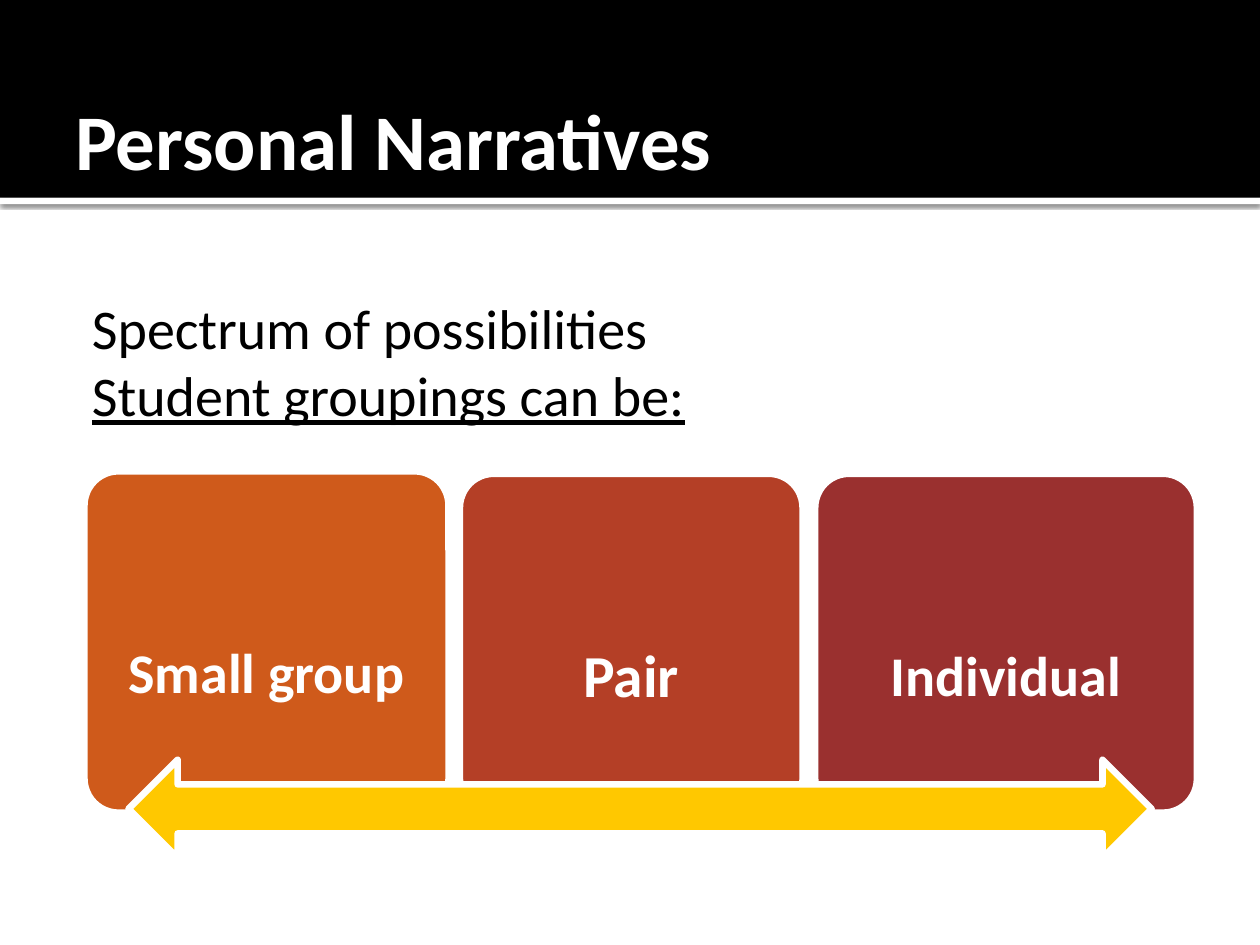
from lxml.etree import SubElement
from pptx import Presentation
from pptx.dml.color import RGBColor
from pptx.enum.shapes import MSO_SHAPE
from pptx.enum.text import MSO_ANCHOR, PP_ALIGN
from pptx.oxml.ns import qn
from pptx.util import Inches, Pt

WHITE = "FFFFFF"
BLACK = "000000"
GROUPINGS = [
    # label, left, top, width, height, fill, text size
    ("Small group", 0.67, 3.74, 2.89, 2.71, "CF5A1B", 32),
    ("Pair", 3.65, 3.76, 2.72, 2.69, "B43F26", 34),
    ("Individual", 6.47, 3.76, 3.03, 2.69, "9A302F", 32),
]


def color(hex_string):
    return RGBColor.from_string(hex_string)


def add_block(page, kind, left, top, width, height, fill, outlined=False):
    block = page.shapes.add_shape(
        kind, Inches(left), Inches(top), Inches(width), Inches(height))
    block.shadow.inherit = False
    block.fill.solid()
    block.fill.fore_color.rgb = color(fill)
    if outlined:
        block.line.color.rgb = color(WHITE)
        block.line.width = Pt(3.78)
    else:
        block.line.fill.background()
    return block


def add_drop_shadow(block):
    """Cast a soft shadow straight down."""
    effects = block._element.spPr.find(qn("a:effectLst"))
    shadow = SubElement(effects, qn("a:outerShdw"), blurRad=str(Pt(2.5)),
                        dist=str(Pt(0.8)), dir="5400000", rotWithShape="0")
    tint = SubElement(shadow, qn("a:srgbClr"), val=BLACK)
    SubElement(tint, qn("a:alpha"), val="60000")


def add_text(page, lines, left, top, width, height, size, text_color,
             bold=False, anchor=MSO_ANCHOR.TOP, align=PP_ALIGN.LEFT, inset=0.1):
    box = page.shapes.add_textbox(
        Inches(left), Inches(top), Inches(width), Inches(height))
    frame = box.text_frame
    frame.word_wrap = True
    frame.vertical_anchor = anchor
    frame.margin_left = frame.margin_right = Inches(inset)
    frame.margin_top = frame.margin_bottom = Inches(inset)
    frame.text = "\n".join(lines)
    for para in frame.paragraphs:
        para.alignment = align
        para.font.name = "Calibri"
        para.font.size = Pt(size)
        para.font.bold = bold
        para.font.color.rgb = color(text_color)
    return frame


def add_header(page):
    strip = add_block(page, MSO_SHAPE.RECTANGLE, 0, 1.57, 10, 0.05, WHITE)
    add_drop_shadow(strip)
    add_block(page, MSO_SHAPE.RECTANGLE, 0, 0, 10, 1.57, BLACK)
    add_text(page, ["Personal Narratives"], 0.5, 0.3, 9, 1.28, 45, WHITE,
             bold=True, anchor=MSO_ANCHOR.BOTTOM)


def add_introduction(page):
    frame = add_text(
        page, ["Spectrum of possibilities", "Student groupings can be:"],
        0.5, 2.23, 9, 1.4, 32, BLACK)
    frame.margin_left = Inches(0.23)
    frame.paragraphs[1].font.underline = True


def add_grouping(page, label, left, top, width, height, fill, size):
    card = add_block(page, MSO_SHAPE.ROUNDED_RECTANGLE,
                     left, top, width, height, fill, outlined=True)
    card.adjustments[0] = 0.1
    frame = add_text(page, [label], left, top + 1.08, width, 1.08, size, WHITE,
                     bold=True, anchor=MSO_ANCHOR.MIDDLE,
                     align=PP_ALIGN.CENTER, inset=0.25)
    frame.paragraphs[0].line_spacing = 0.9


def main():
    deck = Presentation()
    deck.slide_width = Inches(10)
    deck.slide_height = Inches(7.5)
    page = deck.slides.add_slide(deck.slide_layouts[6])
    add_header(page)
    add_introduction(page)
    for grouping in GROUPINGS:
        add_grouping(page, *grouping)
    add_block(page, MSO_SHAPE.LEFT_RIGHT_ARROW, 1.02, 6.03, 8.12, 0.78,
              "FFC800", outlined=True)
    deck.save("out.pptx")


if __name__ == "__main__":
    main()
